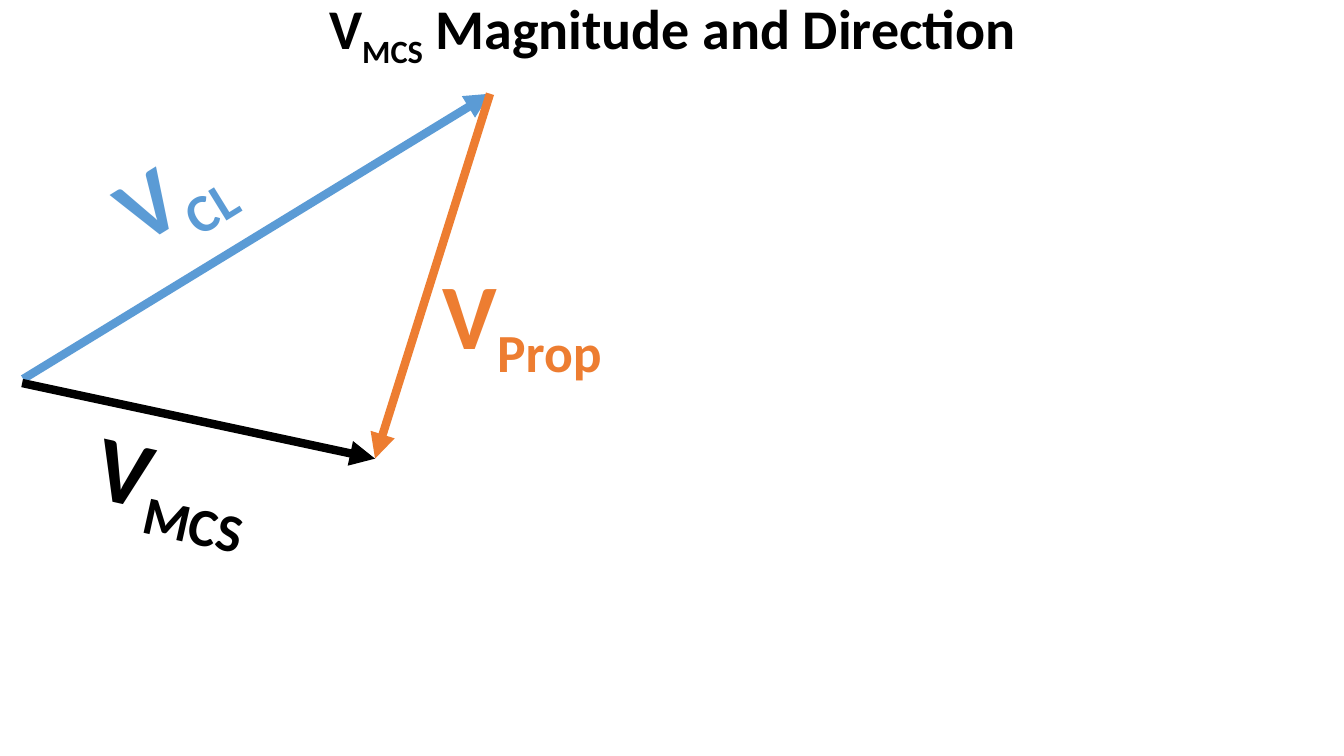
"""Build the slide on the magnitude and direction of a vector triangle."""
from dataclasses import dataclass

from pptx import Presentation
from pptx.dml.color import RGBColor
from pptx.enum.shapes import MSO_CONNECTOR
from pptx.enum.text import MSO_ANCHOR, MSO_AUTO_SIZE, PP_ALIGN
from pptx.oxml.ns import qn
from pptx.slide import Slide
from pptx.text.text import _Paragraph as Paragraph
from pptx.util import Inches, Pt
from lxml.etree import SubElement


@dataclass(frozen=True)
class Vector:
    """A coloured arrow with its subscripted label."""

    subscript: str
    color: str
    start: tuple[float, float]
    end: tuple[float, float]
    label_left: float
    label_top: float
    label_width: float
    rotation: float = 0


LABEL_HEIGHT = 1.21
CL_TIP = (4.86, 0.93)
MCS_TIP = (3.72, 4.55)
VECTORS = [
    Vector("CL", "5B9BD5", (0.23, 3.76), CL_TIP, 1.03, 1.24, 1.32, 328.3),
    Vector("Prop", "ED7D31", CL_TIP, MCS_TIP, 4.29, 2.5, 1.95),
    Vector("MCS", "000000", (0.22, 3.8), MCS_TIP, 0.87, 4.17, 1.91, 12.6),
]


def rgb(color: str) -> RGBColor:
    """Turn a hex string into a colour."""
    return RGBColor.from_string(color)


def write_symbol(para: Paragraph, subscript: str, size: float, color: str, rest: str = "") -> None:
    """Write V with a subscript, then any remaining text."""
    para.add_run().text = "V"
    span = para.add_run()
    span.text = subscript
    span.font._element.set("baseline", "-25000")
    if rest:
        para.add_run().text = rest
    para.font.name = "Calibri"
    para.font.size = Pt(size)
    para.font.bold = True
    para.font.color.rgb = rgb(color)


def add_title(page: Slide) -> None:
    """Place and fill the title placeholder."""
    title = page.shapes.title
    title.left, title.top = Inches(0.92), Inches(0)
    title.width, title.height = Inches(11.5), Inches(0.58)
    frame = title.text_frame
    frame.auto_size = MSO_AUTO_SIZE.NONE
    frame.vertical_anchor = MSO_ANCHOR.MIDDLE
    para = frame.paragraphs[0]
    para.alignment = PP_ALIGN.CENTER
    para.line_spacing = 0.9
    write_symbol(para, "MCS", 40, "000000", " Magnitude and Direction")


def add_arrow(page: Slide, vector: Vector) -> None:
    """Draw the arrow of a vector."""
    points = [Inches(value) for value in vector.start + vector.end]
    arrow = page.shapes.add_connector(MSO_CONNECTOR.STRAIGHT, *points)
    arrow.line.color.rgb = rgb(vector.color)
    arrow.line.width = Pt(6)
    SubElement(arrow.line._get_or_add_ln(), qn("a:tailEnd"), type="triangle")
    SubElement(arrow._element.spPr, qn("a:effectLst"))


def add_label(page: Slide, vector: Vector) -> None:
    """Write the label of a vector."""
    box = page.shapes.add_textbox(
        Inches(vector.label_left), Inches(vector.label_top),
        Inches(vector.label_width), Inches(LABEL_HEIGHT),
    )
    box.rotation = vector.rotation
    frame = box.text_frame
    frame.word_wrap = False
    frame.auto_size = MSO_AUTO_SIZE.SHAPE_TO_FIT_TEXT
    write_symbol(frame.paragraphs[0], vector.subscript, 66, vector.color)


def main() -> None:
    """Build and save the deck."""
    deck = Presentation()
    deck.slide_width, deck.slide_height = Inches(13.33), Inches(7.5)
    page = deck.slides.add_slide(deck.slide_layouts.get_by_name("Title Only"))
    add_title(page)
    for vector in VECTORS:
        add_arrow(page, vector)
        add_label(page, vector)
    deck.save("out.pptx")


if __name__ == "__main__":
    main()
